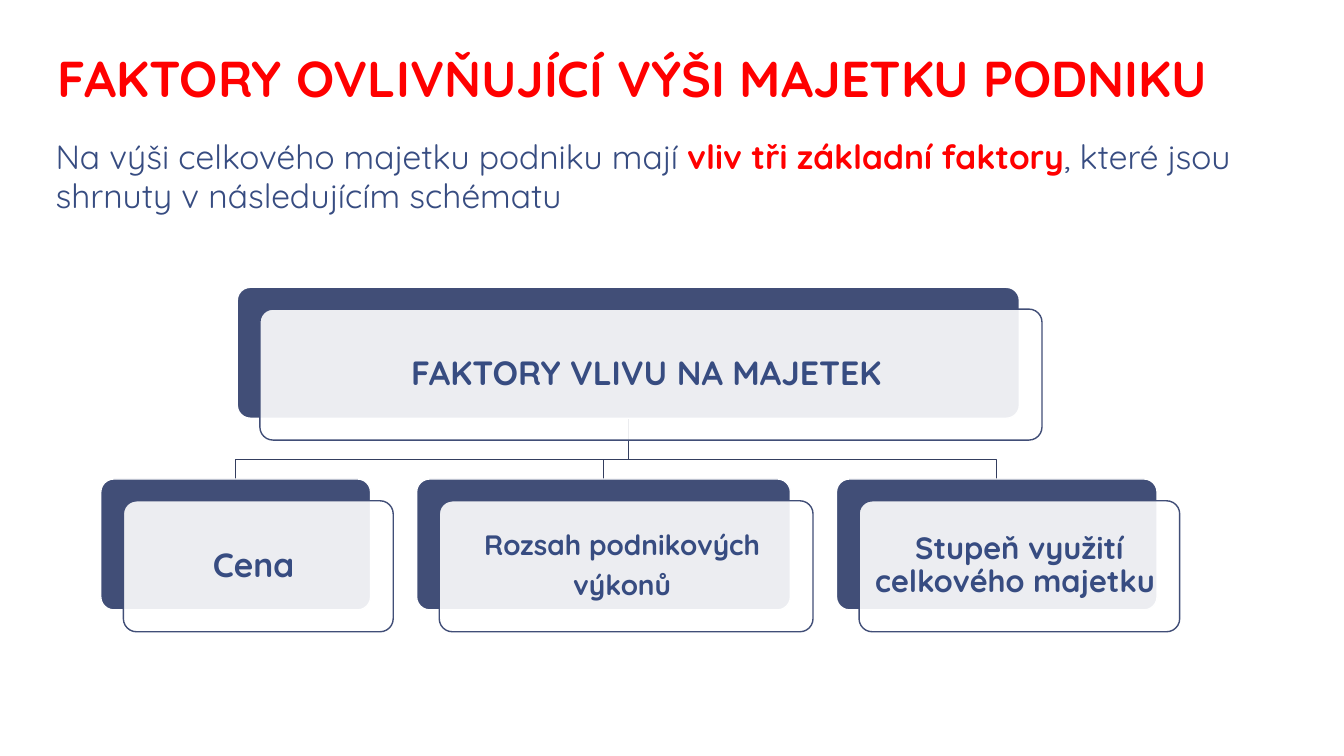
from lxml import etree
from pptx import Presentation
from pptx.dml.color import RGBColor
from pptx.enum import shapes, text
from pptx.oxml import ns
from pptx.util import Cm, Pt

FONT = "Quicksand"
RED, TEXT_BLUE, CARD_BLUE, LINE_BLUE = "FF0000", "374C81", "414E77", "343E5F"
CARD_HEIGHT = 3.3
SHIFT_RIGHT, SHIFT_DOWN = 0.57, 0.55
ROOT_TOP, RAIL_TOP, FACTOR_TOP = 7.24, 11.58, 12.07

# left, width, font size, paragraphs
ROOT = (5.98, 19.71, 24, ["FAKTORY VLIVU NA MAJETEK "])
FACTORS = [
    (2.54, 6.8, 24, ["Cena "]),
    (10.5, 9.42, 20, ["Rozsah podnikových ", "výkonů "]),
    (21.08, 8.08, 22, ["Stupeň využití celkového majetku "]),
]


def color(value):
    return RGBColor.from_string(value)


def set_attributes(target, values):
    for name, value in values.items():
        setattr(target, name, value)


def set_frame(frame, anchor, side=0.33, edge=0.18):
    """Give a text frame its anchor, and its insets in centimetres."""
    set_attributes(frame, {
        "word_wrap": True, "auto_size": text.MSO_AUTO_SIZE.NONE, "vertical_anchor": anchor,
        "margin_left": Cm(side), "margin_right": Cm(side),
        "margin_top": Cm(edge), "margin_bottom": Cm(edge),
    })


def set_line(shape, hex_color):
    shape.shadow.inherit = False
    shape.line.width = Pt(1)
    shape.line.color.rgb = color(hex_color)


def add_run(paragraph, words, size, hex_color, bold=True):
    run = paragraph.add_run()
    run.text = words
    set_attributes(run.font, {"name": FONT, "size": Pt(size), "bold": bold})
    run.font.color.rgb = color(hex_color)


def set_title(slide, words):
    title = slide.shapes.title
    set_attributes(title, {"left": Cm(0.64), "top": Cm(0.53), "width": Cm(30.58), "height": Cm(2.36)})
    set_frame(title.text_frame, text.MSO_ANCHOR.BOTTOM)
    paragraph = title.text_frame.paragraphs[0]
    set_attributes(paragraph, {"alignment": text.PP_ALIGN.CENTER, "line_spacing": 0.85})
    add_run(paragraph, words, 36, RED)


def add_intro(slide, runs):
    box = slide.shapes.add_textbox(Cm(1.07), Cm(3.33), Cm(32.08), Cm(12.42))
    set_frame(box.text_frame, text.MSO_ANCHOR.TOP)
    paragraph = box.text_frame.paragraphs[0]
    paragraph.line_spacing = 0.95
    for words, hex_color, bold in runs:
        add_run(paragraph, words, 24, hex_color, bold)


def add_branch(slide, start, end):
    """Draw a stepped line from the root card at x start to a factor card at x end."""
    builder = slide.shapes.build_freeform(Cm(start), Cm(ROOT_TOP + CARD_HEIGHT))
    steps = [(start, RAIL_TOP), (end, RAIL_TOP), (end, FACTOR_TOP)]
    builder.add_line_segments([(Cm(x), Cm(y)) for x, y in steps], close=False)
    branch = builder.convert_to_shape()
    branch.fill.background()
    set_line(branch, LINE_BLUE)


def add_panel(slide, left, top, width, fill, outline, opacity=100):
    panel = slide.shapes.add_shape(
        shapes.MSO_SHAPE.ROUNDED_RECTANGLE, Cm(left), Cm(top), Cm(width), Cm(CARD_HEIGHT))
    panel.adjustments[0] = 0.1
    panel.fill.solid()
    panel.fill.fore_color.rgb = color(fill)
    set_line(panel, outline)
    if opacity < 100:
        fill_color = panel._element.spPr.find(ns.qn("a:solidFill"))[0]
        etree.SubElement(fill_color, ns.qn("a:alpha"), val=str(opacity * 1000))
    return panel


def add_card(slide, top, left, width, size, lines):
    """Draw a dark panel with a translucent, labelled panel shifted over it."""
    add_panel(slide, left, top, width, CARD_BLUE, "FFFFFF")
    front = add_panel(slide, left + SHIFT_RIGHT, top + SHIFT_DOWN, width, "FFFFFF", CARD_BLUE, 90)
    frame = front.text_frame
    set_frame(frame, text.MSO_ANCHOR.MIDDLE, 0.25, 0.25)
    for index, words in enumerate(lines):
        paragraph = frame.add_paragraph() if index else frame.paragraphs[0]
        set_attributes(paragraph, {
            "alignment": text.PP_ALIGN.CENTER, "line_spacing": 0.9, "space_after": Pt(size * 0.35)})
        add_run(paragraph, words, size, TEXT_BLUE)


def main():
    presentation = Presentation()
    set_attributes(presentation, {"slide_width": Cm(33.87), "slide_height": Cm(19.05)})
    slide = presentation.slides.add_slide(presentation.slide_layouts.get_by_name("Title Only"))
    set_title(slide, "FAKTORY OVLIVŇUJÍCÍ VÝŠI MAJETKU PODNIKU")
    add_intro(slide, [
        ("Na výši celkového majetku podniku mají ", TEXT_BLUE, False),
        ("vliv tři základní faktory", RED, True),
        (", které jsou shrnuty v následujícím schématu", TEXT_BLUE, False),
    ])
    for left, width, *_ in reversed(FACTORS):
        add_branch(slide, ROOT[0] + ROOT[1] / 2, left + width / 2)
    add_card(slide, ROOT_TOP, *ROOT)
    for factor in FACTORS:
        add_card(slide, FACTOR_TOP, *factor)
    presentation.save("out.pptx")


if __name__ == "__main__":
    main()
